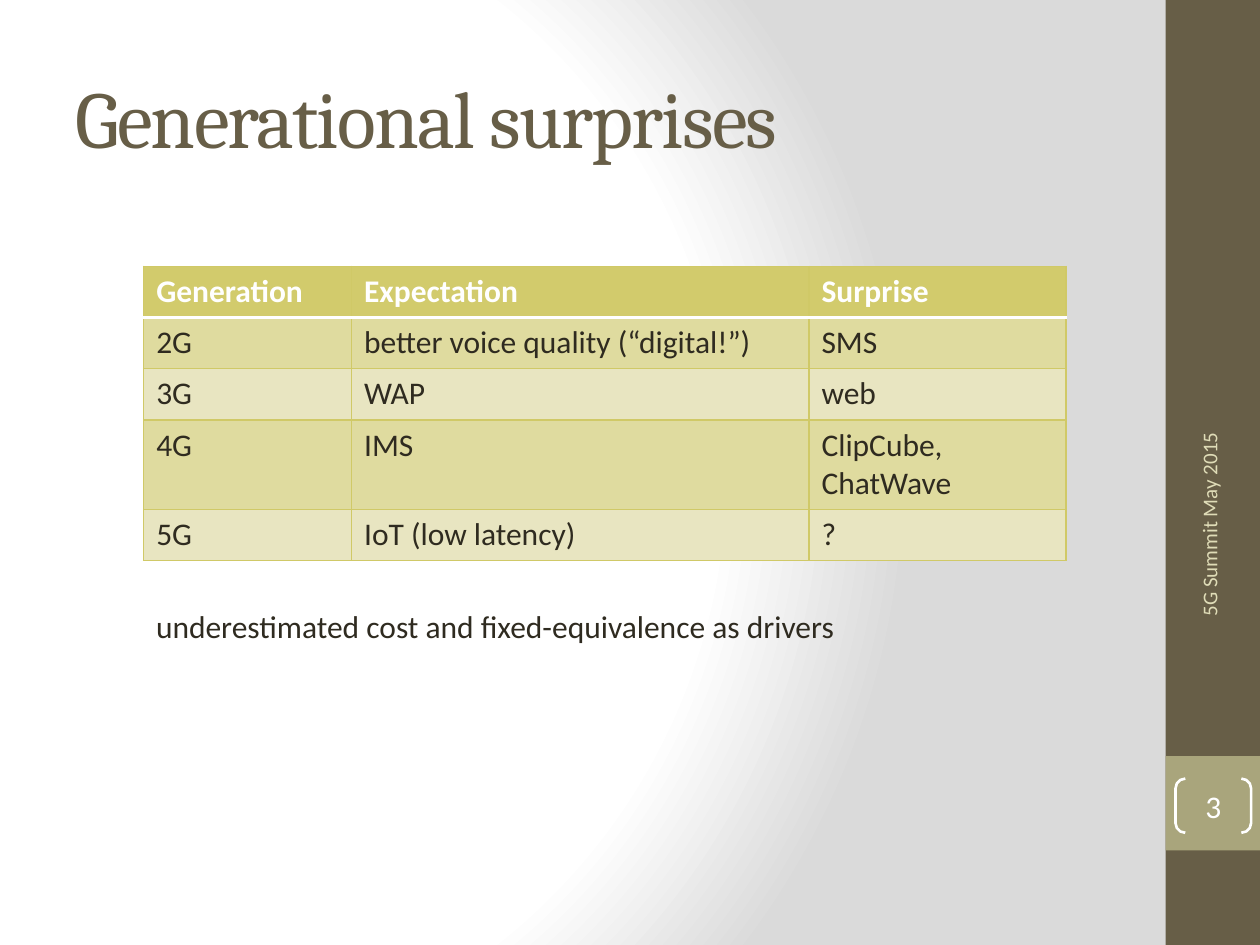
from dataclasses import dataclass

from pptx import Presentation
from pptx.dml.color import RGBColor as RGB
from pptx.enum.shapes import MSO_SHAPE as Kind
from pptx.enum.text import MSO_ANCHOR as Anchor, PP_ALIGN as Align
from pptx.oxml import parse_xml
from pptx.oxml.ns import nsdecls
from pptx.util import Inches, Pt


@dataclass(frozen=True)
class Theme:
    head: str = "Cambria"
    body: str = "Calibri"
    brown: str = "675E47"
    olive: str = "A9A57C"
    sand: str = "DFDCB7"
    ink: str = "2F2B20"
    white: str = "FFFFFF"
    gray: str = "DADADA"
    gold: str = "D2CB6C"
    rule: str = "D0C967"
    bands: tuple = ("DFDB9F", "E8E5C1")
    title: int = 46
    text: int = 18
    small: int = 12


class Deck:
    """Places elements; every length is a percent of the slide's width or height."""

    def __init__(self, theme):
        self.theme = theme
        self.prs = Presentation()
        self.prs.slide_width, self.prs.slide_height = Inches(10), Inches(7.5)
        self.slide = self.prs.slides.add_slide(self.prs.slide_layouts[5])

    def wide(self, share):
        return round(self.prs.slide_width * share / 100)

    def high(self, share):
        return round(self.prs.slide_height * share / 100)

    def box(self, x, y, w, h):
        return self.wide(x), self.high(y), self.wide(w), self.high(h)

    def letter(self, frame, text, size, color, font=None, bold=False,
               align=Align.LEFT, anchor=Anchor.TOP):
        """Set and format the text of a frame; return its run."""
        frame.text = text
        frame.vertical_anchor = anchor
        para = frame.paragraphs[0]
        para.alignment = align
        run = para.runs[0]
        run.font.name = font or self.theme.body
        run.font.size, run.font.bold = Pt(size), bold
        run.font.color.rgb = RGB.from_string(color)
        return run

    def glow(self):
        """Fill the background with a round gradient."""
        self.slide.background.fill.solid()
        holder = self.slide.background.fill._xPr
        stops = [(0, self.theme.white), (75, self.theme.white), (100, self.theme.gray)]
        marks = "".join(f'<a:gs pos="{pos * 1000}"><a:srgbClr val="{color}"/></a:gs>'
                        for pos, color in stops)
        holder.replace(holder[0], parse_xml(
            f'<a:gradFill {nsdecls("a")} rotWithShape="1"><a:gsLst>{marks}</a:gsLst>'
            '<a:path path="circle"><a:fillToRect l="20000" t="50000" r="100000" b="50000"/>'
            '</a:path></a:gradFill>'))

    def title(self, text, *place):
        shape = self.slide.shapes.title
        shape.left, shape.top, shape.width, shape.height = self.box(*place)
        run = self.letter(shape.text_frame, text, self.theme.title, self.theme.brown,
                          self.theme.head, anchor=Anchor.MIDDLE)
        run.font._element.set("spc", "-100")

    def block(self, color, *place):
        shape = self.slide.shapes.add_shape(Kind.RECTANGLE, *self.box(*place))
        shape.shadow.inherit = False
        shape.fill.solid()
        shape.fill.fore_color.rgb = RGB.from_string(color)
        shape.line.fill.background()

    def badge(self, text, *place):
        """Put the slide number between a pair of brackets."""
        shape = self.slide.shapes.add_shape(Kind.DOUBLE_BRACKET, *self.box(*place))
        shape.shadow.inherit = False
        shape.adjustments[0] = 0.18
        shape.fill.background()
        shape.line.color.rgb = RGB.from_string(self.theme.white)
        shape.line.width = Pt(1.5)
        frame = shape.text_frame
        frame.margin_left = frame.margin_right = frame.margin_top = frame.margin_bottom = 0
        self.letter(frame, text, self.theme.text, self.theme.white,
                    align=Align.CENTER, anchor=Anchor.MIDDLE)

    def label(self, text, *place, size, color, turn=0, wrap=False, **style):
        shape = self.slide.shapes.add_textbox(*self.box(*place))
        shape.rotation = turn
        shape.text_frame.word_wrap = wrap
        self.letter(shape.text_frame, text, size, color, **style)

    def edge(self, cell, sides):
        """Draw cell borders; sides maps L, R, T, B to (color, points)."""
        props = cell._tc.get_or_add_tcPr()
        for spot, (side, (color, width)) in enumerate(sides.items()):
            props.insert(spot, parse_xml(
                f'<a:ln{side} {nsdecls("a")} w="{Pt(width)}"><a:solidFill>'
                f'<a:srgbClr val="{color}"/></a:solidFill></a:ln{side}>'))

    def table(self, data, left, top, cols, rows):
        look = self.theme
        grid = self.slide.shapes.add_table(
            len(rows), len(cols), *self.box(left, top, sum(cols), sum(rows))).table
        for col, share in zip(grid.columns, cols):
            col.width = self.wide(share)
        for row, share in zip(grid.rows, rows):
            row.height = self.high(share)
        thin, thick = (look.rule, 1), (look.white, 2)
        for r, line in enumerate(data):
            head = r == 0
            for c, text in enumerate(line):
                cell = grid.cell(r, c)
                self.letter(cell.text_frame, text, look.text,
                            look.white if head else look.ink, bold=head)
                cell.fill.solid()
                cell.fill.fore_color.rgb = RGB.from_string(
                    look.gold if head else look.bands[(r - 1) % 2])
                self.edge(cell, {"L": thin, "R": thin,
                                 "T": thick if r == 1 else thin,
                                 "B": thick if head else thin})


def main():
    theme = Theme()
    deck = Deck(theme)
    deck.glow()
    deck.block(theme.brown, 92.5, 0, 7.5, 100)
    deck.block(theme.olive, 92.5, 80, 7.5, 10)
    deck.title("Generational surprises", 5, 4, 83.3, 16.67)
    deck.label("5G Summit May 2015", 83, 59.07, 25.9, 5.33, size=theme.small,
               color=theme.sand, turn=270, wrap=True,
               align=Align.RIGHT, anchor=Anchor.MIDDLE)
    deck.badge("3", 93.3, 82.4, 6, 5.73)
    data = [
        ("Generation", "Expectation", "Surprise"),
        ("2G", "better voice quality (“digital!”)", "SMS"),
        ("3G", "WAP", "web"),
        ("4G", "IMS", "ClipCube, ChatWave"),
        ("5G", "IoT (low latency)", "?"),
    ]
    row = 5.41
    deck.table(data, 11.4, 28.2, (16.5, 36.3, 20.4), (row, row, row, 9.48, row))
    deck.label("underestimated cost and fixed-equivalence as drivers",
               11.4, 63.6, 58, 5.33, size=theme.text, color=theme.ink)
    deck.prs.save("out.pptx")


if __name__ == "__main__":
    main()
